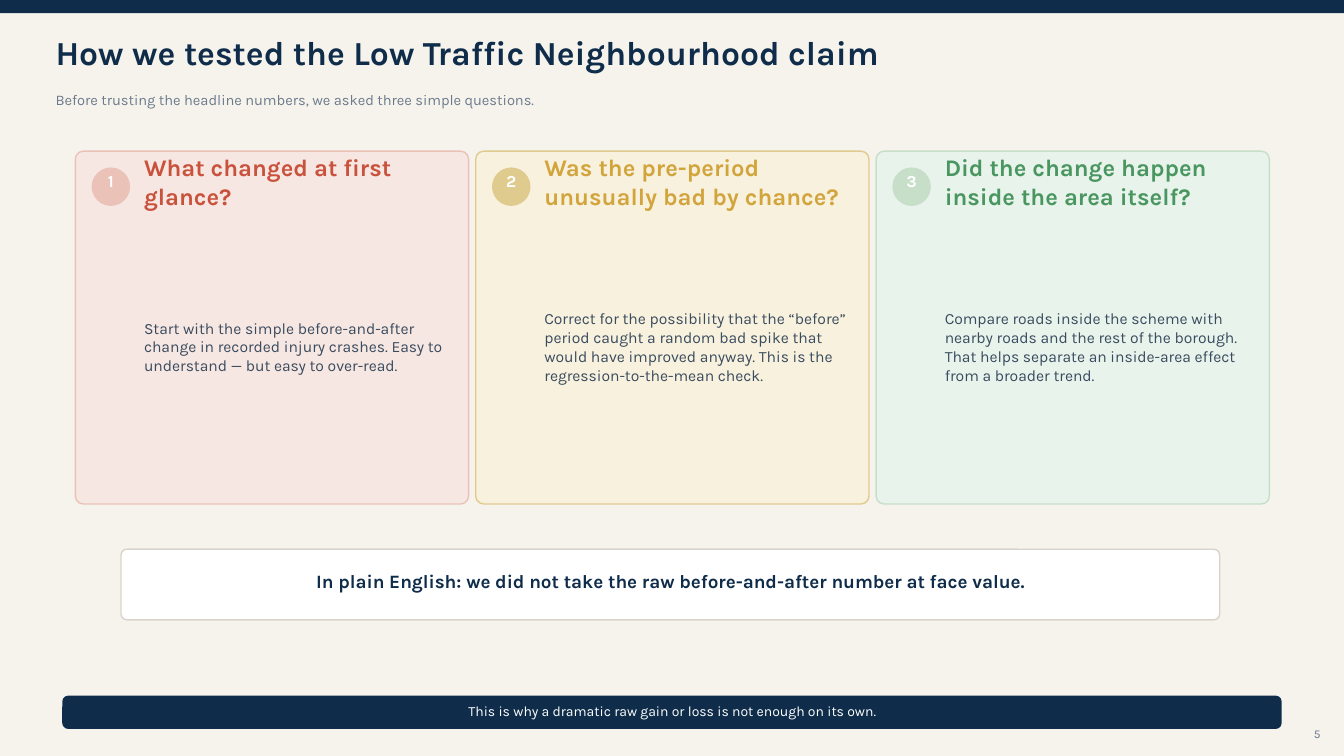
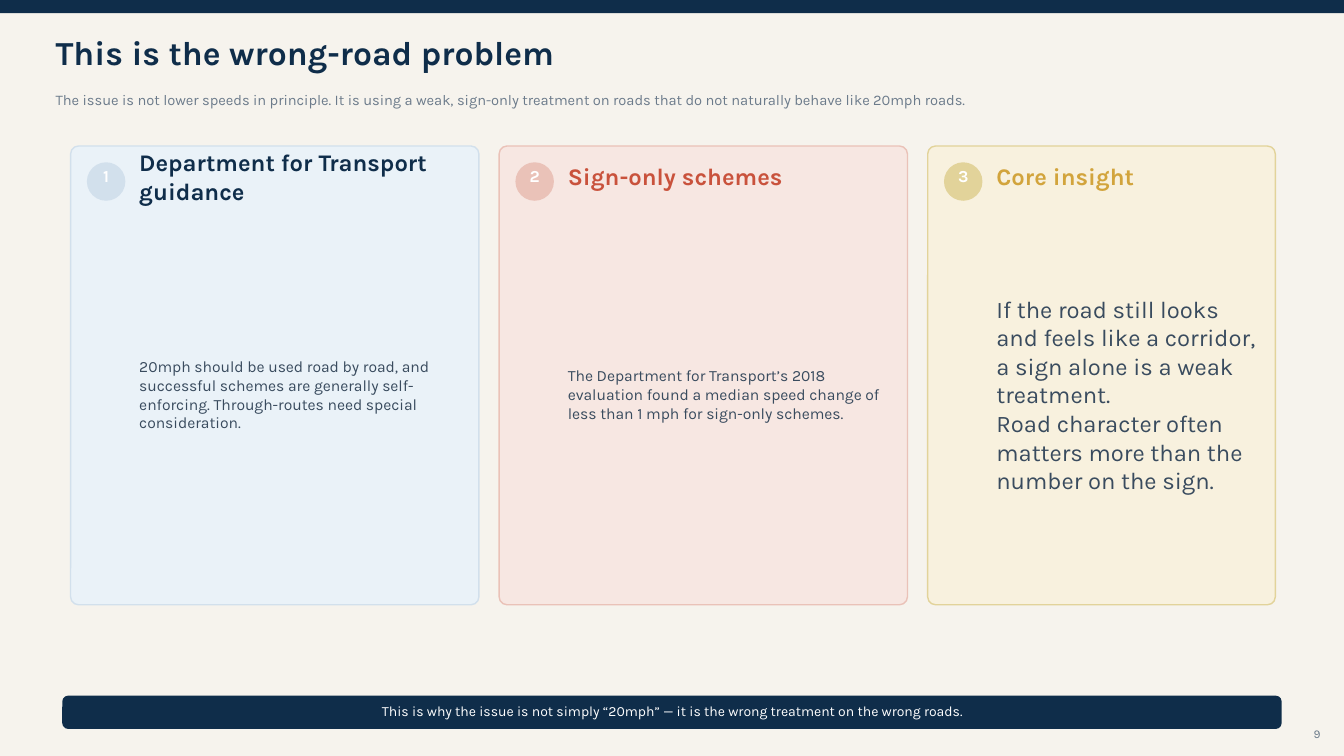
import pptx
import pptx.dml.color
import pptx.enum.shapes
import pptx.enum.text
import pptx.util

Cm = pptx.util.Cm
SHAPE = pptx.enum.shapes.MSO_SHAPE
ALIGN = pptx.enum.text.PP_ALIGN

FONT = "Karla"
PAGE_WIDTH, PAGE_HEIGHT = 33.87, 19.05
COLOURS = {
    "page": "F6F3ED", "navy": "0F2D4A", "grey": "6C7B8B", "body": "394B5E",
    "white": "FFFFFF", "rule": "D9D4CB",
    "red": "C9523C", "red_fill": "F7E7E2", "red_edge": "EAC2B8",
    "gold": "D2A43C", "gold_fill": "F8F1DE", "gold_edge": "E0CB8E",
    "pale_gold_edge": "E2D39A",
    "green": "4A9660", "green_fill": "E8F3EB", "green_edge": "C7DEC9",
    "blue_fill": "EAF2F8", "blue_edge": "D2E0EC",
}
# Card themes: heading, fill, edge
THEMES = {
    "red": ("red", "red_fill", "red_edge"),
    "gold": ("gold", "gold_fill", "gold_edge"),
    "pale_gold": ("gold", "gold_fill", "pale_gold_edge"),
    "green": ("green", "green_fill", "green_edge"),
    "blue": ("navy", "blue_fill", "blue_edge"),
}


def colour(name):
    return pptx.dml.color.RGBColor.from_string(COLOURS[name])


def add_panel(page, kind, box, fill, edge=None, radius=None):
    """Filled shape; box is left, top, width, height in cm."""
    panel = page.shapes.add_shape(kind, *map(Cm, box))
    panel.shadow.inherit = False
    panel.fill.solid()
    panel.fill.fore_color.rgb = colour(fill)
    if edge:
        panel.line.color.rgb = colour(edge)
        panel.line.width = pptx.util.Pt(1)
    else:
        panel.line.fill.background()
    if radius:
        panel.adjustments[0] = radius / min(box[2:])


def add_text(page, box, text, size, ink, bold=False, align=ALIGN.LEFT):
    """Text box without margins, one paragraph a line."""
    frame = page.shapes.add_textbox(*map(Cm, box)).text_frame
    frame.word_wrap = True
    frame.vertical_anchor = pptx.enum.text.MSO_ANCHOR.MIDDLE
    frame.margin_left = frame.margin_right = 0
    frame.margin_top = frame.margin_bottom = 0
    frame.text = text
    for para in frame.paragraphs:
        para.alignment = align
        para.font.name = FONT
        para.font.size = pptx.util.Pt(size)
        para.font.bold = bold
        para.font.color.rgb = colour(ink)


def add_page(deck, title, subtitle, number, footer):
    """Page with everything the slides share."""
    page = deck.slides.add_slide(deck.slide_layouts[6])
    page.background.fill.solid()
    page.background.fill.fore_color.rgb = colour("page")
    # Top band and headings
    add_panel(page, SHAPE.RECTANGLE, (0, 0, PAGE_WIDTH, 0.33), "navy")
    add_text(page, (1.4, 0.86, 30.48, 0.91), title, 24, "navy", bold=True)
    add_text(page, (1.4, 2.08, 30.48, 0.86), subtitle, 10.5, "grey")
    # Page number and footer band
    add_text(page, (32.77, 18.29, 0.51, 0.38), str(number), 8.5, "grey",
             align=ALIGN.RIGHT)
    add_panel(page, SHAPE.ROUNDED_RECTANGLE, (1.57, 17.53, 30.73, 0.84),
              "navy", radius=0.15)
    add_text(page, (2.08, 17.68, 29.72, 0.46), footer, 10, "white",
             align=ALIGN.CENTER)
    return page


def add_card(page, box, number, theme, heading, body, body_size=11.2):
    left, top, width, height = box
    ink, fill, edge = THEMES[theme]
    pad, badge, indent = 0.41, 0.97, 1.73
    text_width = width - 2.18
    add_panel(page, SHAPE.ROUNDED_RECTANGLE, box, fill, edge, radius=0.2)
    # Numbered badge
    add_panel(page, SHAPE.OVAL, (left + pad, top + pad, badge, badge), edge)
    add_text(page, (left + 0.64, top + 0.56, 0.51, 0.38), str(number), 12,
             "white", bold=True, align=ALIGN.CENTER)
    # Heading and body
    add_text(page, (left + indent, top + pad, text_width, 0.71), heading, 17,
             ink, bold=True)
    add_text(page, (left + indent, top + 1.37, text_width, height - 1.78),
             body, body_size, "body")


def add_card_row(page, left, top, height, gap, widths, cards):
    for number, (width, card) in enumerate(zip(widths, cards), start=1):
        add_card(page, (left, top, width, height), number, *card)
        left += width + gap


def add_callout(page, box, text):
    left, top, width, height = box
    add_panel(page, SHAPE.ROUNDED_RECTANGLE, box, "white", "rule", radius=0.15)
    add_text(page, (left + 0.64, top + 0.53, width - 1.27, 0.56), text, 13.5,
             "navy", bold=True, align=ALIGN.CENTER)


def build_test_page(deck):
    page = add_page(
        deck, "How we tested the Low Traffic Neighbourhood claim",
        "Before trusting the headline numbers, we asked three simple questions.",
        5, "This is why a dramatic raw gain or loss is not enough on its own.")
    add_card_row(page, 1.9, 3.81, 8.89, 0.18, [9.91] * 3, [
        ("red", "What changed at first glance?",
         "Start with the simple before-and-after change in recorded injury "
         "crashes. Easy to understand — but easy to over-read."),
        ("gold", "Was the pre-period unusually bad by chance?",
         "Correct for the possibility that the “before” period caught a random "
         "bad spike that would have improved anyway. This is the "
         "regression-to-the-mean check."),
        ("green", "Did the change happen inside the area itself?",
         "Compare roads inside the scheme with nearby roads and the rest of "
         "the borough. That helps separate an inside-area effect from a "
         "broader trend."),
    ])
    add_callout(page, (3.05, 13.84, 27.69, 1.78),
                "In plain English: we did not take the raw before-and-after "
                "number at face value.")


def build_problem_page(deck):
    page = add_page(
        deck, "This is the wrong-road problem",
        "The issue is not lower speeds in principle. It is using a weak, "
        "sign-only treatment on roads that do not naturally behave like "
        "20mph roads.",
        9, "This is why the issue is not simply “20mph” — it is the wrong "
        "treatment on the wrong roads.")
    add_card_row(page, 1.78, 3.68, 11.56, 0.51, [10.29, 10.29, 8.76], [
        ("blue", "Department for Transport guidance",
         "20mph should be used road by road, and successful schemes are "
         "generally self-enforcing. Through-routes need special "
         "consideration."),
        ("red", "Sign-only schemes",
         "The Department for Transport’s 2018 evaluation found a median speed "
         "change of less than 1 mph for sign-only schemes."),
        ("pale_gold", "Core insight",
         "If the road still looks and feels like a corridor, a sign alone is "
         "a weak treatment.\nRoad character often matters more than the "
         "number on the sign.", 17),
    ])


def main():
    deck = pptx.Presentation()
    deck.slide_width, deck.slide_height = Cm(PAGE_WIDTH), Cm(PAGE_HEIGHT)
    build_test_page(deck)
    build_problem_page(deck)
    deck.save("out.pptx")


if __name__ == "__main__":
    main()
